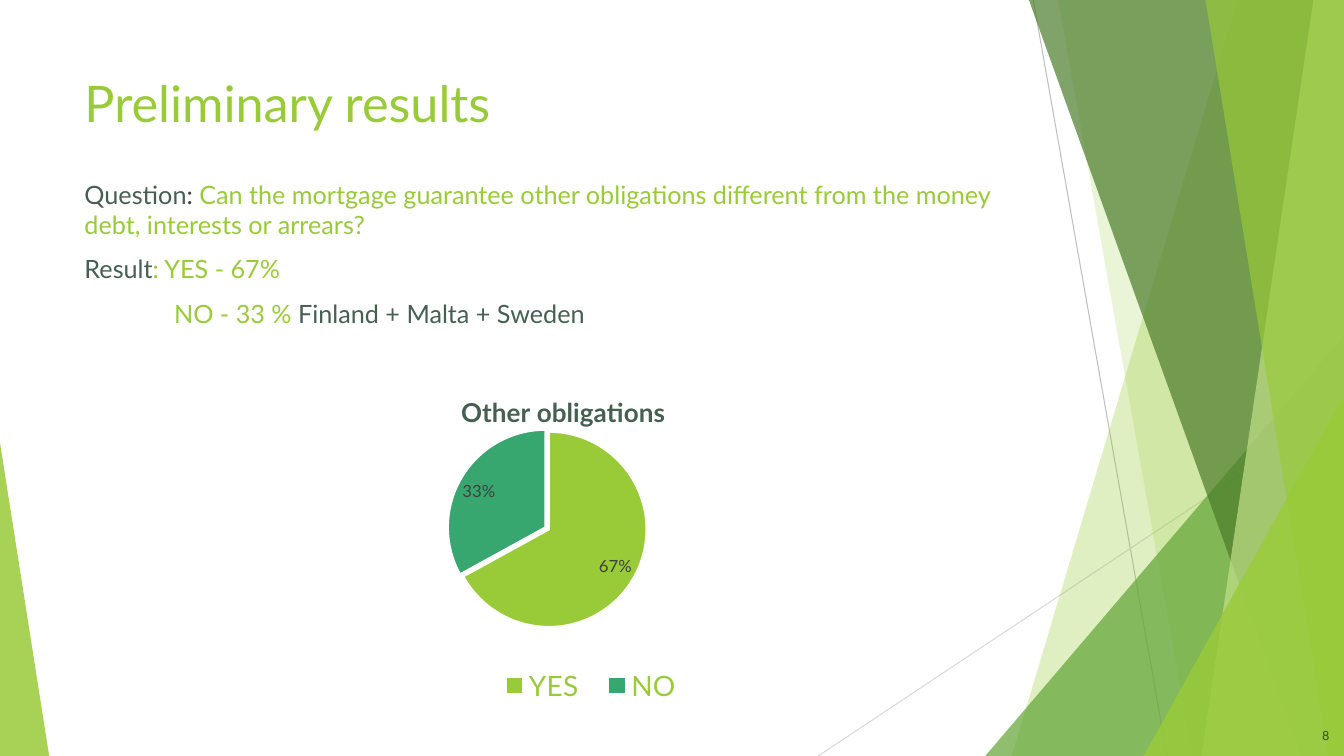
from typing import NamedTuple

from lxml import etree
from pptx import Presentation
from pptx.chart.data import CategoryChartData
from pptx.dml.color import RGBColor
from pptx.enum.chart import XL_CHART_TYPE, XL_LABEL_POSITION, XL_LEGEND_POSITION
from pptx.enum.shapes import MSO_CONNECTOR, MSO_SHAPE
from pptx.enum.text import MSO_ANCHOR, PP_ALIGN
from pptx.oxml.ns import qn
from pptx.util import Cm, Pt

PIE = XL_CHART_TYPE.PIE
BEST_FIT = XL_LABEL_POSITION.BEST_FIT
LEGEND_BOTTOM = XL_LEGEND_POSITION.BOTTOM
STRAIGHT = MSO_CONNECTOR.STRAIGHT
TRIANGLE = MSO_SHAPE.ISOSCELES_TRIANGLE
TOP, MIDDLE = MSO_ANCHOR.TOP, MSO_ANCHOR.MIDDLE
LEFT, RIGHT = PP_ALIGN.LEFT, PP_ALIGN.RIGHT

LIME = RGBColor(0x99, 0xCB, 0x38)
PALE_LIME = RGBColor(0xC2, 0xE0, 0x88)
GREEN = RGBColor(0x63, 0xA5, 0x37)
DARK_GREEN = RGBColor(0x4A, 0x7C, 0x29)
DEEP_GREEN = RGBColor(0x31, 0x52, 0x1C)
TEAL = RGBColor(0x37, 0xA7, 0x6F)
SLATE = RGBColor(0x45, 0x5F, 0x51)
CHARCOAL = RGBColor(0x40, 0x40, 0x40)
BLACK = RGBColor(0, 0, 0)
WHITE = RGBColor(0xFF, 0xFF, 0xFF)
GREY = RGBColor(0xBF, 0xBF, 0xBF)
LIGHT_GREY = RGBColor(0xD9, 0xD9, 0xD9)

FONT = "Lato"


class Box(NamedTuple):
    """A region of the slide, in centimetres."""
    left: float
    top: float
    width: float
    height: float

    def lengths(self):
        return [Cm(value) for value in self]


SLIDE = Box(0, 0, 33.87, 19.05)
FACETS = Box(20.62, 0, 13.25, 19.05)
CORNER = Box(0, 11.15, 1.24, 7.9)
TITLE = Box(1.88, 1.7, 23.88, 1.9)
BODY = Box(1.88, 4.39, 24.74, 12.4)
CHART = Box(5.08, 9.53, 18.34, 8.51)
NUMBER = Box(31.85, 18.03, 1.9, 1.02)


def style_font(font, size, color, bold=False):
    for name, value in {"name": FONT, "size": Pt(size), "bold": bold}.items():
        setattr(font, name, value)
    font.color.rgb = color


def paint(shape, color, opacity):
    """Give a shape a see-through fill, with no line and no shadow."""
    shape.shadow.inherit = False
    shape.line.fill.background()
    shape.fill.solid()
    shape.fill.fore_color.rgb = color
    color_element = shape.fill._xPr.find(".//" + qn("a:srgbClr"))
    etree.SubElement(color_element, qn("a:alpha"), val=str(opacity * 1000))


def add_hairline(slide, start, end, color):
    line = slide.shapes.add_connector(
        STRAIGHT, *[Cm(value) for value in (*start, *end)])
    line.line.color.rgb = color
    line.line.width = Pt(0.75)
    etree.SubElement(line._element.spPr, qn("a:effectLst"))


def add_band(slide, box, top_offset, bottom_offset, color, opacity):
    """Fill the box to the right of a slanted edge."""
    right, bottom = box.left + box.width, box.top + box.height
    outline = [(box.left + top_offset, box.top), (right, box.top),
               (right, bottom), (box.left + bottom_offset, bottom)]
    points = [(Cm(x), Cm(y)) for x, y in outline]
    builder = slide.shapes.build_freeform(*points[0], scale=1.0)
    builder.add_line_segments(points[1:], close=True)
    paint(builder.convert_to_shape(), color, opacity)


def add_triangle(slide, box, apex, color, opacity):
    triangle = slide.shapes.add_shape(TRIANGLE, *box.lengths())
    triangle.adjustments[0] = apex
    paint(triangle, color, opacity)


def add_right_triangle(slide, box, width, height, color, opacity):
    """Place a triangle in the bottom right corner of the box."""
    corner = Box(box.left + box.width - width, box.top + box.height - height,
                 width, height)
    add_triangle(slide, corner, 1, color, opacity)


def add_facets(slide, box):
    right, bottom = box.left + box.width, box.top + box.height
    add_hairline(slide, (box.left + 5.42, box.top), (box.left + 8.79, bottom), GREY)
    add_hairline(slide, (right, box.top + 10.24), (box.left, bottom), LIGHT_GREY)
    add_band(slide, box, 10.57, 4.88, LIME, 30)
    add_band(slide, box, 6.05, 9.43, LIME, 20)
    add_right_triangle(slide, box, 9.04, 10.59, GREEN, 72)
    for band in ((5.31, 12.17, DARK_GREEN, 70), (12.48, 9.66, PALE_LIME, 70),
                 (9.76, 12.86, LIME, 65)):
        add_band(slide, box, *band)
    add_right_triangle(slide, box, 5.05, 9.07, LIME, 80)


def add_text(slide, box, paragraphs, size, anchor=TOP, alignment=LEFT):
    """Write paragraphs, each a left margin in cm and a list of (text, color)."""
    frame = slide.shapes.add_textbox(*box.lengths()).text_frame
    frame.word_wrap = True
    frame.vertical_anchor = anchor
    for index, (margin, runs) in enumerate(paragraphs):
        paragraph = frame.add_paragraph() if index else frame.paragraphs[0]
        paragraph.alignment = alignment
        paragraph.space_before = Pt(10 if index else 0)
        if margin:
            paragraph._p.get_or_add_pPr().set("marL", str(Cm(margin)))
        for text, color in runs:
            run = paragraph.add_run()
            run.text = text
            style_font(run.font, size, color)


def make_layout(parent, inner=False, **fractions):
    """Return a manual chart layout, taking out the parent's present one."""
    for present in parent.findall(qn("c:layout")):
        parent.remove(present)
    layout = etree.Element(qn("c:layout"))
    manual = etree.SubElement(layout, qn("c:manualLayout"))
    if inner:
        etree.SubElement(manual, qn("c:layoutTarget"), val="inner")
    for mode in ("xMode", "yMode"):
        etree.SubElement(manual, qn("c:" + mode), val="edge")
    for name, value in fractions.items():
        etree.SubElement(manual, qn("c:" + name), val=str(value))
    return layout


def add_obligations_chart(slide, box):
    data = CategoryChartData()
    data.categories = ["YES", "NO"]
    data.add_series("Series 1", (67, 33))
    chart = slide.shapes.add_chart(PIE, *box.lengths(), data).chart
    style_font(chart.font, 10, BLACK)

    chart.has_title = True
    paragraph = chart.chart_title.text_frame.paragraphs[0]
    run = paragraph.add_run()
    run.text = "Other obligations"
    style_font(run.font, 18.6, SLATE, bold=True)
    title = chart.chart_title._element
    layout = make_layout(title, x=0.35, y=0.03)
    title.find(qn("c:tx")).addnext(layout)

    chart.has_legend = True
    chart.legend.position = LEGEND_BOTTOM
    chart.legend.include_in_layout = False
    style_font(chart.legend.font, 20, LIME)
    legend = chart.legend._element
    layout = make_layout(legend, x=0.39, y=0.85, w=0.29, h=0.12)
    legend.find(qn("c:legendPos")).addnext(layout)

    plot = chart.plots[0]
    plot.vary_by_categories = True
    plot_area = plot._element.getparent()
    plot_area.insert(0, make_layout(plot_area, inner=True,
                                    x=0, y=0.15, w=0.95, h=0.59))
    series = plot.series[0]
    series.format.fill.solid()
    series.format.fill.fore_color.rgb = LIME
    explosion = etree.Element(qn("c:explosion"), val="2")
    series._element.find(qn("c:spPr")).addnext(explosion)
    for index, color in enumerate((LIME, TEAL)):
        point = series.points[index].format
        point.fill.solid()
        point.fill.fore_color.rgb = color
        point.line.color.rgb = WHITE
        point.line.width = Pt(1.5)

    labels = series.data_labels
    settings = {"show_percentage": True, "show_value": False, "number_format": "0%",
                "number_format_is_linked": False, "position": BEST_FIT}
    for name, value in settings.items():
        setattr(labels, name, value)
    style_font(labels.font, 12, CHARCOAL)


def main():
    presentation = Presentation()
    presentation.slide_width = Cm(SLIDE.width)
    presentation.slide_height = Cm(SLIDE.height)
    slide = presentation.slides.add_slide(presentation.slide_layouts[6])
    add_facets(slide, FACETS)
    add_triangle(slide, CORNER, 0, LIME, 85)
    add_text(slide, TITLE, [(0, [("Preliminary results", LIME)])], 36)
    question = ("Can the mortgage guarantee other obligations different "
                "from the money debt, interests or arrears?")
    add_text(slide, BODY, [
        (0, [("Question", SLATE), (": ", CHARCOAL), (question, LIME)]),
        (0, [("Result", SLATE), (": YES - 67%", LIME)]),
        (2.26, [("NO - 33 % ", LIME), ("Finland + Malta + Sweden", SLATE)]),
    ], 18)
    add_text(slide, NUMBER, [(0, [("8", DEEP_GREEN)])], 9, MIDDLE, RIGHT)
    add_obligations_chart(slide, CHART)
    presentation.save("out.pptx")


if __name__ == "__main__":
    main()
